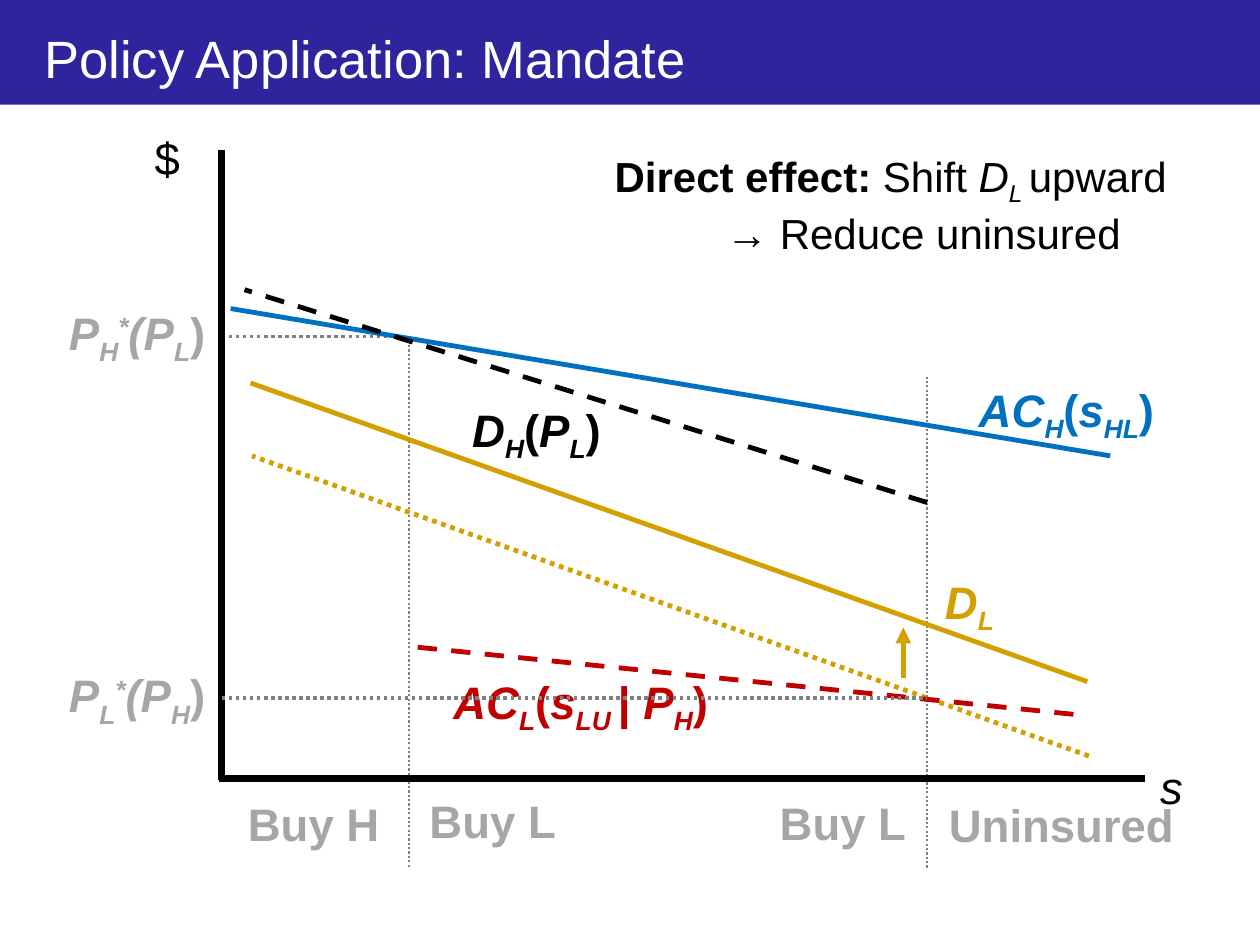
from lxml import etree
from pptx import Presentation
from pptx.dml.color import RGBColor
from pptx.enum.dml import MSO_LINE
from pptx.enum.shapes import MSO_CONNECTOR, MSO_SHAPE
from pptx.enum.text import MSO_ANCHOR, PP_ALIGN
from pptx.oxml.ns import qn
from pptx.util import Cm, Pt

STRAIGHT, RECT = MSO_CONNECTOR.STRAIGHT, MSO_SHAPE.RECTANGLE
DASH, DOT, SOLID = MSO_LINE.DASH, MSO_LINE.ROUND_DOT, MSO_LINE.SOLID
LEFT, CENTER, MIDDLE = PP_ALIGN.LEFT, PP_ALIGN.CENTER, MSO_ANCHOR.MIDDLE

WHITE = RGBColor(0xFF, 0xFF, 0xFF)
BLACK = RGBColor(0, 0, 0)
INDIGO = RGBColor(0x2E, 0x24, 0x9E)
BLUE = RGBColor(0x00, 0x70, 0xC0)
RED = RGBColor(0xC0, 0, 0)
GOLD = RGBColor(0xD2, 0xA0, 0)
GREY = RGBColor(0x80, 0x80, 0x80)
SILVER = RGBColor(0xA6, 0xA6, 0xA6)

FONT = "Arial"
SUB, SUPER = -25000, 30000
LABEL_H = 1.37

X_H, X_U = 3.78, 14.22
Y_H, Y_L, Y_AXIS, Y_GUIDE = 3.76, 11.05, 12.67, 14.48

BACK_LINES = [
    ((X_U, 4.57), (X_U, Y_GUIDE), GREY, 1.25, DOT),
    ((0, Y_H), (3.63, Y_H), GREY, 2, DOT),
    ((X_H, Y_H), (X_H, Y_GUIDE), GREY, 1.25, DOT),
    ((0, 0), (0, 12.7), BLACK, 4, SOLID),
    ((18.62, Y_AXIS), (-0.05, Y_AXIS), BLACK, 4, SOLID),
    ((17.48, 12.22), (0.61, 6.17), GOLD, 2.75, DOT),
    ((17.17, 11.38), (X_H, 10.01), RED, 2.75, DASH),
    ((17.91, 6.17), (0.18, 3.2), BLUE, 2.75, SOLID),
]
FRONT_LINES = [
    ((0, Y_L), (X_U, Y_L), GREY, 2, DOT),
    ((X_U, 7.11), (0.46, 2.82), BLACK, 2.75, DASH),
    ((17.45, 10.72), (0.58, 4.7), GOLD, 2.75, SOLID),
]
CURVE_LABELS = [
    (14.33, 8.43, 2.54, GOLD, [("D", "bi"), ("L", "bi", SUB)]),
    (4.42, 10.44, 6.91, RED, [("AC", "bi"), ("L", "bi", SUB), ("(", "b"), ("s", "bi"),
                              ("LU ", "bi", SUB), ("| ", "b"), ("P", "bi"),
                              ("H", "bi", SUB), (")", "b")]),
    (4.8, 4.95, 4.85, BLACK, [("D", "bi"), ("H", "bi", SUB), ("(", "b"), ("P", "bi"),
                              ("L", "bi", SUB), (")", "b")]),
    (15.01, 4.55, 5.26, BLUE, [("AC", "bi"), ("H", "bi", SUB), ("(", "b"), ("s", "bi"),
                               ("HL", "bi", SUB), (")", "b")]),
]
PRICES = [(3.0, "H", "L"), (10.31, "L", "H")]
REGIONS = [
    (-0.23, 12.9, 4.17, "Buy H"),
    (3.38, 12.85, 4.17, "Buy L"),
    (10.44, 12.88, 4.17, "Buy L"),
    (13.74, 12.93, 6.38, "Uninsured"),
]


def add_runs(p, runs, color, size):
    """Append (text, style letters, baseline) runs to a paragraph."""
    for text, style, *base in runs:
        r = p.add_run()
        r.text = text
        fmt = {"name": FONT, "size": Pt(size), "bold": "b" in style, "italic": "i" in style}
        for name, value in fmt.items():
            setattr(r.font, name, value)
        r.font.color.rgb = color
        if base:
            r.font._element.set("baseline", str(base[0]))


def add_text(s, box, paragraphs, color, size=26, align=LEFT):
    """Add a wrapped text box in cm and return its paragraphs."""
    tf = s.shapes.add_textbox(*map(Cm, box)).text_frame
    tf.word_wrap = True
    for i, runs in enumerate(paragraphs):
        p = tf.add_paragraph() if i else tf.paragraphs[0]
        p.alignment = align
        add_runs(p, runs, color, size)
    return tf.paragraphs


def add_line(s, origin, start, end, color, width, dash=SOLID, arrow=False):
    """Add a straight line between two points relative to the origin."""
    left, top = origin
    ends = (left + start[0], top + start[1], left + end[0], top + end[1])
    line = s.shapes.add_connector(STRAIGHT, *map(Cm, ends))
    line.line.color.rgb = color
    line.line.width = Pt(width)
    line.line.dash_style = dash
    if arrow:
        etree.SubElement(line.line._get_or_add_ln(), qn("a:tailEnd"), type="triangle")
    etree.SubElement(line._element.spPr, qn("a:effectLst"))


def build_title(s, left, top, width, height):
    """Place the coloured band and the title on it."""
    band = s.shapes.add_shape(RECT, *map(Cm, (left, top, width, height)))
    band.shadow.inherit = False
    band.fill.solid()
    band.fill.fore_color.rgb = INDIGO
    band.line.fill.background()
    s.shapes._spTree.insert(2, band._element)
    title = s.shapes.title
    box = {"left": left + 0.64, "top": top + 0.43, "width": width - 1.07, "height": 1.47}
    for name, value in box.items():
        setattr(title, name, Cm(value))
    tf = title.text_frame
    tf.vertical_anchor = MIDDLE
    tf.paragraphs[0].alignment = LEFT
    add_runs(tf.paragraphs[0], [("Policy Application: Mandate", "")], WHITE, 30)


def build_labels(s, left, top):
    """Name the axes, curves, prices and regions of the diagram."""
    for x, y, w, h, text, style in [(-1.6, -0.61, 1.65, 2.08, "$", ""),
                                    (18.67, 12.07, 1.12, 1.52, "s", "i")]:
        p, = add_text(s, (left + x, top + y, w, h), [[(text, style)]], BLACK)
        p.line_spacing = 1.07
        p.space_after = Pt(8)
    for x, y, w, color, runs in CURVE_LABELS:
        add_text(s, (left + x, top + y, w, LABEL_H), [runs], color)
    for y, own, other in PRICES:
        runs = [("P", "bi"), (own, "bi", SUB), ("*", "bi", SUPER), ("(P", "bi"),
                (other, "bi", SUB), (")", "b")]
        add_text(s, (left - 3.33, top + y, 3.68, LABEL_H), [runs], SILVER)
    for x, y, w, text in REGIONS:
        add_text(s, (left + x, top + y, w, LABEL_H), [[(text, "b")]], SILVER, align=CENTER)


def build_diagram(s, left, top):
    """Draw the demand and cost diagram from the top of its vertical axis."""
    for line in BACK_LINES:
        add_line(s, (left, top), *line)
    build_labels(s, left, top)
    for line in FRONT_LINES:
        add_line(s, (left, top), *line)
    add_line(s, (left, top), (13.74, 10.64), (13.74, 9.63), GOLD, 3, arrow=True)


def build_note(s, left, top, width, height):
    """State the direct effect and its indented consequence."""
    effect = [("Direct effect:", "b"), (" Shift ", ""), ("D", "i"), ("L ", "i", SUB),
              ("upward", "")]
    result = [("→ Reduce uninsured", "")]
    ps = add_text(s, (left, top, width, height), [effect, result], BLACK, 24)
    ps[1]._p.get_or_add_pPr().set("marL", str(Cm(2.25)))


def main():
    """Build the slide and save it."""
    prs = Presentation()
    prs.slide_width, prs.slide_height = Cm(25.4), Cm(19.05)
    s = prs.slides.add_slide(prs.slide_layouts[5])
    build_title(s, 0, 0, 25.4, 2.11)
    build_diagram(s, 4.47, 3.02)
    build_note(s, 12.14, 2.9, 12.09, 2.31)
    prs.save("out.pptx")


if __name__ == "__main__":
    main()
